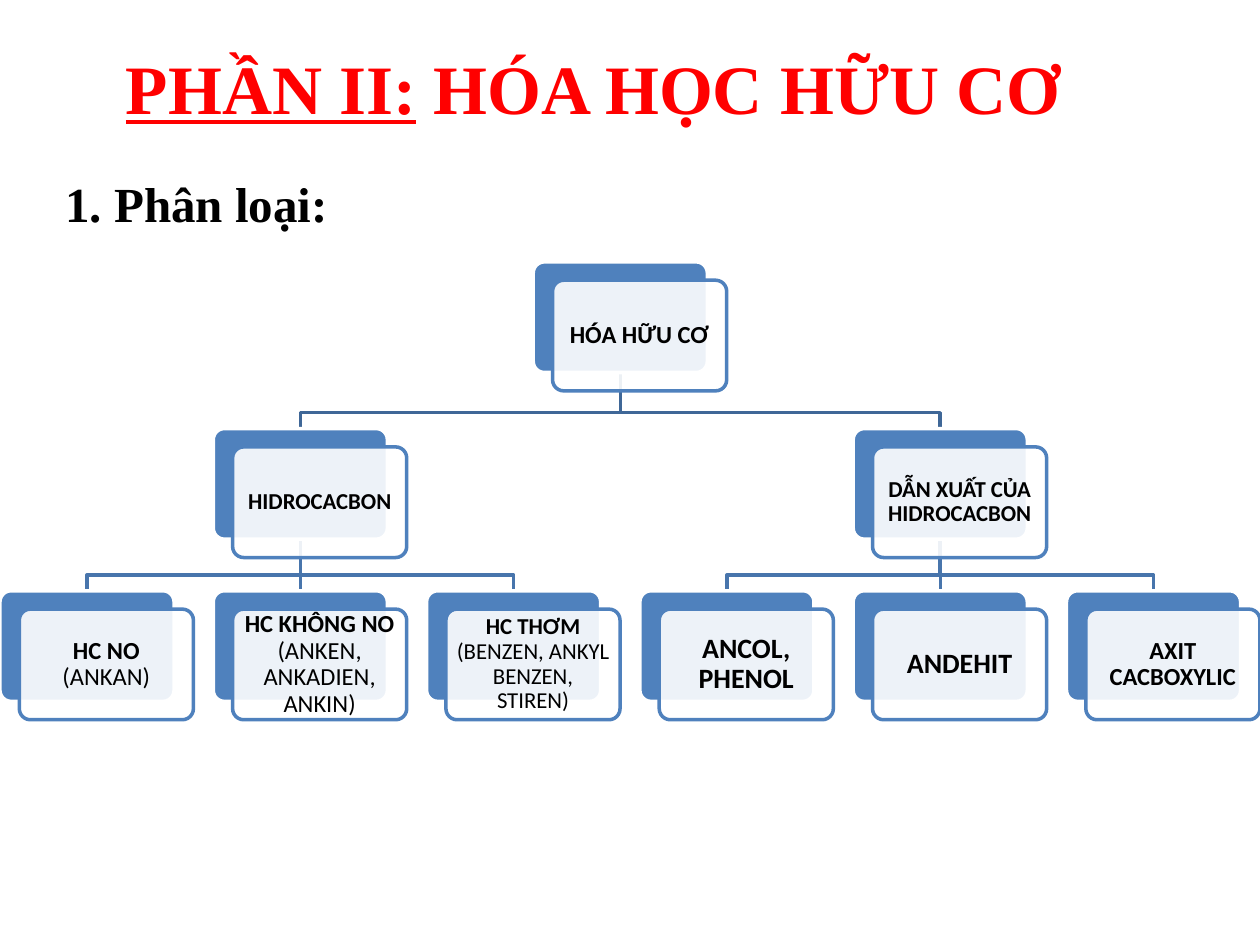
from lxml.etree import SubElement as Sub
from pptx import Presentation as Deck
from pptx.dml.color import RGBColor as Rgb
from pptx.enum.shapes import MSO_CONNECTOR as Link, MSO_SHAPE as Kind
from pptx.enum.text import MSO_ANCHOR as Anchor, MSO_AUTO_SIZE as Fit, PP_ALIGN as Align
from pptx.oxml.ns import qn
from pptx.util import Cm, Pt

STEP, WIDE, HIGH = 4.3, 3.51, 2.23
SHIFT, DROP, BEND = 0.39, 0.37, 0.32
TOPS = (0, 3.36, 6.63)
LINES = ("3F6797", "4875AC")
BLUE, WHITE, BLACK, RED = "4F81BD", "FFFFFF", "000000", "FF0000"

# row, column, parent, size, bold text, plain text
NODES = [
    (0, 2.5, None, 14, "HÓA HỮU CƠ", ""),
    (1, 1, 0, 13, "HIDROCACBON", ""),
    (1, 4, 0, 13, "DẪN XUẤT CỦA HIDROCACBON", ""),
    (2, 0, 1, 14, "HC NO ", "(ANKAN)"),
    (2, 1, 1, 14, "HC KHÔNG NO ", "(ANKEN, ANKADIEN, ANKIN)"),
    (2, 2, 1, 13, "HC THƠM ", "(BENZEN, ANKYL BENZEN, STIREN)"),
    (2, 3, 2, 16, "ANCOL, PHENOL", ""),
    (2, 4, 2, 16, "ANDEHIT", ""),
    (2, 5, 2, 14, "AXIT CACBOXYLIC", ""),
]


def tint(part, code):
    part.solid()
    part.fore_color.rgb = Rgb.from_string(code)


def stroke(shape, code):
    tint(shape.line.fill, code)
    shape.line.width = Pt(2)


def write(para, text, size, face, code, bold=True):
    run = para.add_run()
    run.text = text
    font = run.font
    font.size, font.name, font.bold = Pt(size), face, bold
    tint(font.fill, code)
    return run


def title(slide, x, y, w, h):
    head = slide.shapes.title
    head.left, head.top, head.width, head.height = Cm(x), Cm(y), Cm(w), Cm(h)
    frame = head.text_frame
    frame.auto_size = Fit.NONE
    frame.vertical_anchor = Anchor.MIDDLE
    frame.margin_right = Cm(1.73)
    para = frame.paragraphs[0]
    para.alignment = Align.CENTER
    write(para, "PHẦN II:", 39.6, "Times New Roman", RED).font.underline = True
    write(para, " HÓA HỌC HỮU CƠ", 39.6, "Times New Roman", RED)


def label(slide, x, y, w, h):
    frame = slide.shapes.add_textbox(Cm(x), Cm(y), Cm(w), Cm(h)).text_frame
    frame.word_wrap = True
    write(frame.paragraphs[0], "1. Phân loại:", 28, "Times New Roman", BLACK)


def plate(slide, x, y, fill, line):
    shape = slide.shapes.add_shape(Kind.ROUNDED_RECTANGLE, Cm(x), Cm(y), Cm(WIDE), Cm(HIGH))
    shape.adjustments[0] = 0.1
    shape.shadow.inherit = False
    tint(shape.fill, fill)
    stroke(shape, line)
    return shape


def card(slide, x, y, size, bold, plain):
    back = plate(slide, x, y, BLUE, WHITE)
    front = plate(slide, x + SHIFT, y + DROP, WHITE, BLUE)
    paint = front.fill._xPr.find(qn("a:solidFill"))[0]
    Sub(paint, qn("a:alpha")).set("val", "90000")
    frame = front.text_frame
    frame.word_wrap = True
    frame.vertical_anchor = Anchor.MIDDLE
    pad = Cm(size * 0.011)
    frame.margin_left = frame.margin_right = frame.margin_top = frame.margin_bottom = pad
    para = frame.paragraphs[0]
    para.alignment, para.line_spacing = Align.CENTER, 0.9
    write(para, bold, size, "Calibri", BLACK)
    if plain:
        write(para, plain, size, "Calibri", BLACK, False)
    return back


def branch(slide, start, end, code):
    (ax, ay), (bx, by) = start, end
    if ax == bx:
        line = slide.shapes.add_connector(Link.STRAIGHT, Cm(ax), Cm(ay), Cm(bx), Cm(by))
        stroke(line, code)
        Sub(line._element.spPr, qn("a:effectLst"))
        return line
    mid = Cm(by - BEND)
    pen = slide.shapes.build_freeform(Cm(ax), Cm(ay))
    pen.add_line_segments([(Cm(ax), mid), (Cm(bx), mid), (Cm(bx), Cm(by))], close=False)
    elbow = pen.convert_to_shape()
    elbow.fill.background()
    elbow.shadow.inherit = False
    stroke(elbow, code)
    return None


def tree(slide, x, y):
    spots = [(x + col * STEP, y + TOPS[row]) for row, col, *_ in NODES]
    links = []
    for kid, (row, _, up, *_) in enumerate(NODES):
        if up is None:
            continue
        (ax, ay), (bx, by) = spots[up], spots[kid]
        half = WIDE / 2
        line = branch(slide, (ax + half, ay + HIGH), (bx + half, by), LINES[row - 1])
        if line is not None:
            links.append((line, up, kid))
    cards = [card(slide, *spot, *node[3:]) for spot, node in zip(spots, NODES)]
    for line, up, kid in links:
        line.begin_connect(cards[up], 2)
        line.end_connect(cards[kid], 0)


def main():
    deck = Deck()
    deck.slide_width, deck.slide_height = Cm(25.4), Cm(19.05)
    slide = deck.slides.add_slide(deck.slide_layouts[5])
    title(slide, 1.27, 0, 22.86, 3.48)
    tree(slide, 0, 5.28)
    label(slide, 1.07, 3.38, 20.96, 1.45)
    deck.save("out.pptx")


if __name__ == "__main__":
    main()
